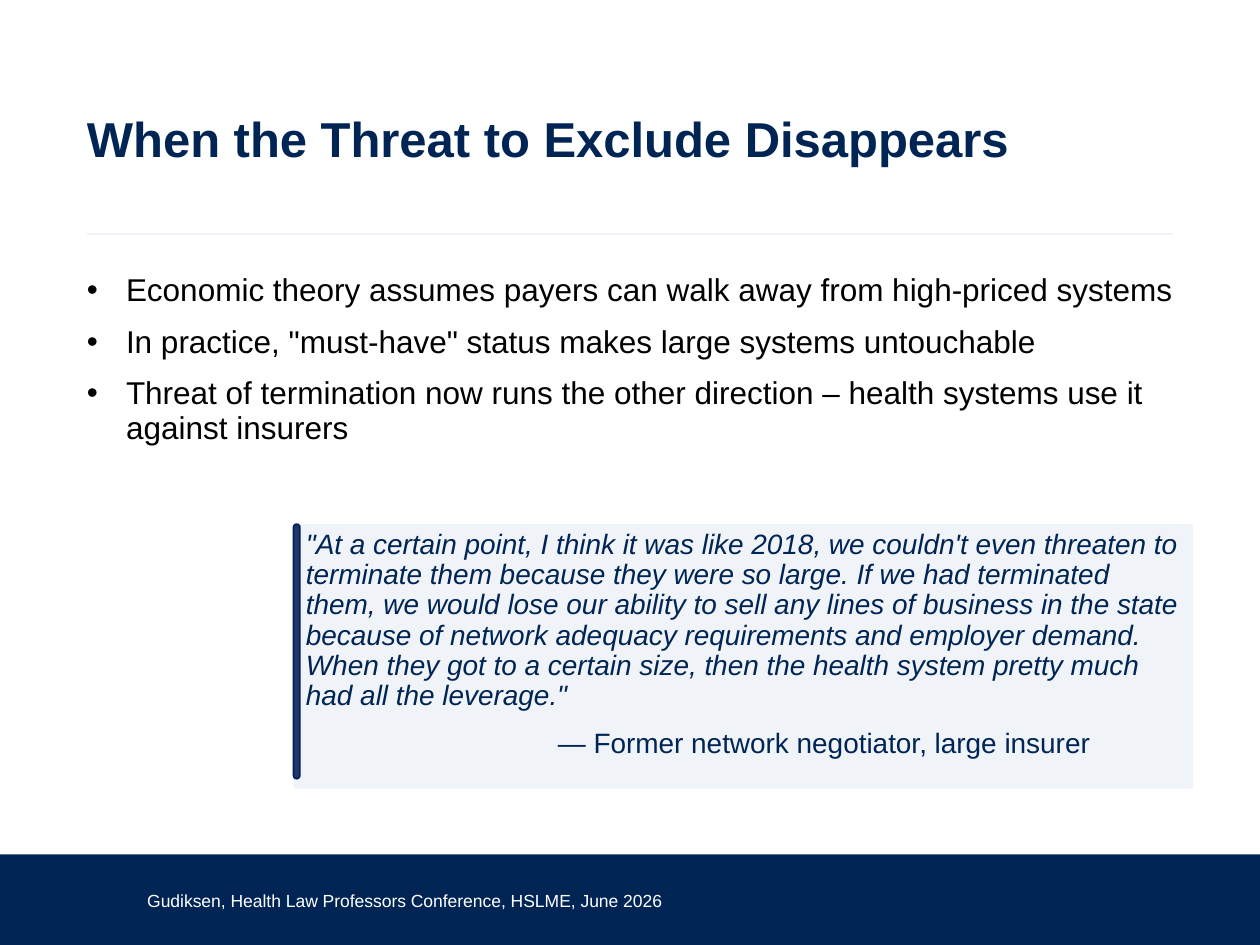
from lxml import etree
from pptx import Presentation
from pptx.dml.color import RGBColor
from pptx.enum.shapes import MSO_CONNECTOR, MSO_SHAPE
from pptx.enum.text import MSO_ANCHOR, MSO_AUTO_SIZE, PP_ALIGN
from pptx.oxml.ns import qn
from pptx.util import Inches, Pt

RECT, ROUNDED = MSO_SHAPE.RECTANGLE, MSO_SHAPE.ROUNDED_RECTANGLE
STRAIGHT = MSO_CONNECTOR.STRAIGHT
TOP, MIDDLE = MSO_ANCHOR.TOP, MSO_ANCHOR.MIDDLE
LEFT, NO_FIT = PP_ALIGN.LEFT, MSO_AUTO_SIZE.NONE

WIDTH, HEIGHT = 10, 7.5
MARGIN = 0.69
CONTENT = WIDTH - 2 * MARGIN
BAND_TOP = 6.78
RULE_Y = 1.86
QUOTE_X, QUOTE_Y = 2.33, 4.16
FONT = "Arial"
COLORS = {"navy": "002554", "rule": "EEF1F8", "panel": "F0F4F9", "bar": "203864",
          "bar_line": "002060", "black": "000000", "white": "FFFFFF"}

TITLE = "When the Threat to Exclude Disappears"
FOOTER = "Gudiksen, Health Law Professors Conference, HSLME, June 2026"
BULLETS = [
    "Economic theory assumes payers can walk away from high-priced systems",
    "In practice, \"must-have\" status makes large systems untouchable",
    "Threat of termination now runs the other direction – health systems use it "
    "against insurers",
]
QUOTE = (
    "\"At a certain point, I think it was like 2018, we couldn't even threaten to "
    "terminate them because they were so large. If we had terminated them, we would "
    "lose our ability to sell any lines of business in the state because of network "
    "adequacy requirements and employer demand. When they got to a certain size, then "
    "the health system pretty much had all the leverage.\""
)
SPEAKER = "— Former network negotiator, large insurer"


def color(name):
    return RGBColor.from_string(COLORS[name])


def place(sp, x, y, w, h):
    sp.left, sp.top, sp.width, sp.height = map(Inches, (x, y, w, h))


def set_frame(tf, anchor=TOP, insets=(0.1, 0.05, 0.1, 0.05)):
    tf.word_wrap = True
    tf.auto_size = NO_FIT
    tf.vertical_anchor = anchor
    tf.margin_left, tf.margin_top, tf.margin_right, tf.margin_bottom = map(Inches, insets)


def add_text(tf, text, size, ink, first=True, spacing=0.9, bold=False, italic=False):
    """Fill the first paragraph, or append one spaced from the one before."""
    p = tf.paragraphs[0] if first else tf.add_paragraph()
    p.alignment = LEFT
    p.line_spacing = spacing
    p.space_before = Pt(0 if first else 10)
    r = p.add_run()
    r.text = text
    r.font.name, r.font.size = FONT, Pt(size)
    r.font.bold, r.font.italic = bold, italic
    r.font.color.rgb = color(ink)
    return p


def set_indent(p, left, hanging=0):
    pPr = p._p.get_or_add_pPr()
    pPr.set("marL", str(Inches(left)))
    pPr.set("indent", str(-Inches(hanging)))
    return pPr


def add_box(shapes, kind, x, y, w, h, fill, line=None):
    sp = shapes.add_shape(kind, *map(Inches, (x, y, w, h)))
    sp.shadow.inherit = False
    sp.fill.solid()
    sp.fill.fore_color.rgb = color(fill)
    if line:
        sp.line.color.rgb = color(line)
        sp.line.width = Pt(1)
    else:
        sp.line.fill.background()
    return sp


def add_rule(shapes, x, y, w):
    line = shapes.add_connector(STRAIGHT, *map(Inches, (x, y, x + w, y)))
    line.line.color.rgb = color("rule")
    line.line.width = Pt(1)
    etree.SubElement(line._element.spPr, qn("a:effectLst"))


def fill_title(title):
    place(title, MARGIN, 0.4, CONTENT, 1.45)
    set_frame(title.text_frame, MIDDLE, (0, 0.05, 0, 0.05))
    add_text(title.text_frame, TITLE, 28, "navy", bold=True)


def fill_body(body):
    place(body, MARGIN, 2.18, CONTENT, 4.57)
    tf = body.text_frame
    set_frame(tf, insets=(0, 0, 0, 0.05))
    for i, text in enumerate(BULLETS):
        p = add_text(tf, text, 18, "black", first=i == 0)
        pPr = set_indent(p, 0.31, 0.31)
        etree.SubElement(pPr, qn("a:buFont")).set("typeface", FONT)
        etree.SubElement(pPr, qn("a:buChar")).set("char", "•")


def add_quote(shapes):
    group = shapes.add_group_shape().shapes
    panel = add_box(group, RECT, QUOTE_X, QUOTE_Y, 7.14, 2.1, "panel")
    tf = panel.text_frame
    set_frame(tf)
    add_text(tf, QUOTE, 16, "navy", italic=True)
    set_indent(add_text(tf, SPEAKER, 16, "navy", first=False), 2)
    bar = add_box(group, ROUNDED, QUOTE_X, QUOTE_Y, 0.05, 2.02, "bar", "bar_line")
    bar.adjustments[0] = 0.5


def add_footer(shapes):
    add_box(shapes, RECT, 0, BAND_TOP, WIDTH, HEIGHT - BAND_TOP, "navy")
    label = shapes.add_textbox(*map(Inches, (1.07, 6.95, 4.85, 0.4)))
    set_frame(label.text_frame, MIDDLE)
    add_text(label.text_frame, FOOTER, 10, "white", spacing=1.0)


def main():
    prs = Presentation()
    prs.slide_width, prs.slide_height = Inches(WIDTH), Inches(HEIGHT)
    s = prs.slides.add_slide(prs.slide_layouts[1])
    fill_title(s.shapes.title)
    fill_body(s.placeholders[1])
    add_rule(s.shapes, MARGIN, RULE_Y, CONTENT)
    add_footer(s.shapes)
    add_quote(s.shapes)
    prs.save("out.pptx")


if __name__ == "__main__":
    main()
